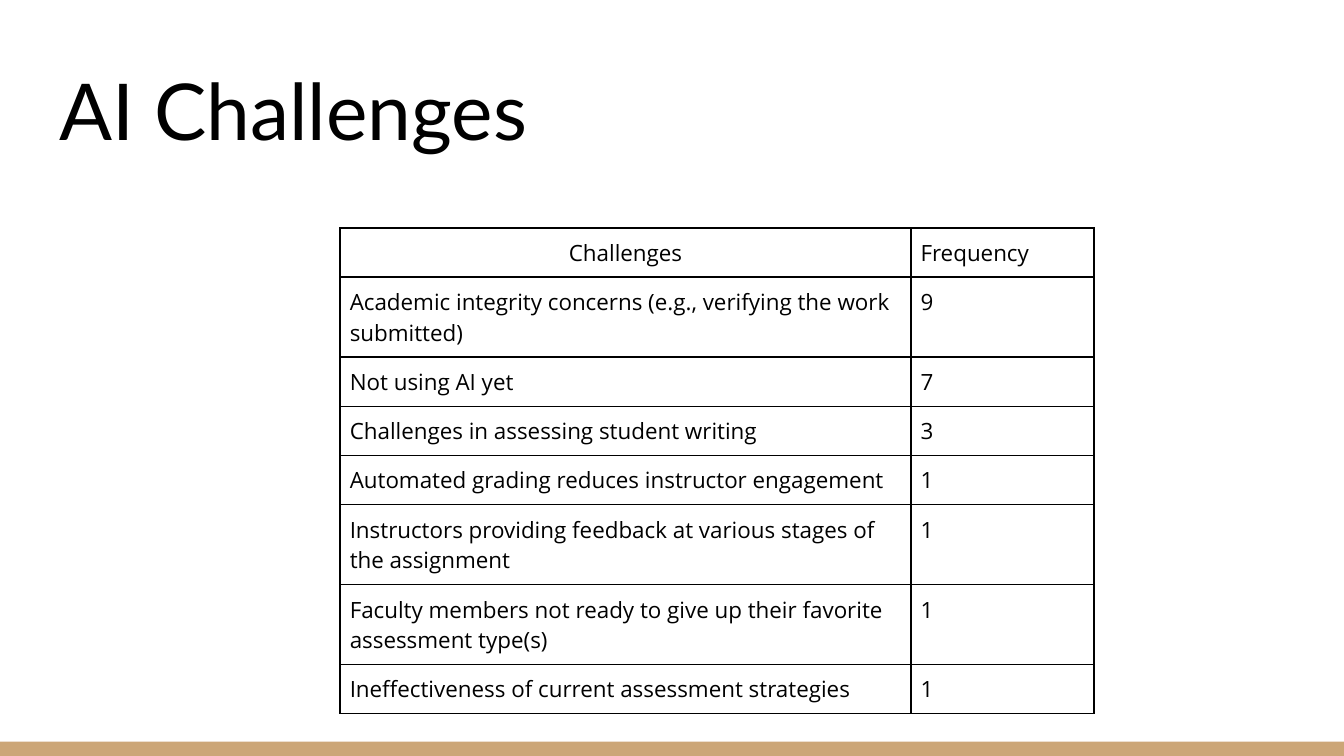
from pptx import Presentation
from pptx.dml.color import RGBColor
from pptx.enum import shapes, text
from pptx.oxml import parse_xml
from pptx.oxml.ns import nsdecls
from pptx.util import Cm, Pt

BLACK = RGBColor(0x00, 0x00, 0x00)
TAN = RGBColor(0xCC, 0xA6, 0x77)

HEADINGS = ("Challenges", "Frequency")
CHALLENGES = [
    ("Academic integrity concerns (e.g., verifying the work submitted)", 9),
    ("Not using AI yet", 7),
    ("Challenges in assessing student writing", 3),
    ("Automated grading reduces instructor engagement", 1),
    ("Instructors providing feedback at various stages of the assignment", 1),
    ("Faculty members not ready to give up their favorite assessment type(s)", 1),
    ("Ineffectiveness of current assessment strategies", 1),
]
FREQUENCY_SHARE = 0.243  # part of the table width
ONE_LINE, TWO_LINES = Cm(0.93), Cm(1.51)
LINE_CHARS = 50  # longer entries wrap onto a second line


def style_text(paragraph, font_name, size):
    for run in paragraph.runs:
        run.font.name = font_name
        run.font.size = Pt(size)
        run.font.color.rgb = BLACK


def add_footer_band(slide, left, top, width, height):
    band = slide.shapes.add_shape(
        shapes.MSO_SHAPE.RECTANGLE, left, top, width, height)
    band.shadow.inherit = False
    band.fill.solid()
    band.fill.fore_color.rgb = TAN
    band.line.fill.background()


def add_title(slide, left, top, width, height):
    frame = slide.shapes.add_textbox(left, top, width, height).text_frame
    frame.word_wrap = True
    frame.vertical_anchor = text.MSO_ANCHOR.BOTTOM
    frame.margin_left = frame.margin_right = Cm(0.25)
    frame.margin_top = frame.margin_bottom = Cm(0.25)
    frame.text = "AI Challenges"
    style_text(frame.paragraphs[0], "Lato", 42)


def add_borders(cell):
    properties = cell._tc.get_or_add_tcPr()
    for position, side in enumerate(("lnL", "lnR", "lnT", "lnB")):
        # Borders must come before the fill
        properties.insert(position, parse_xml(
            f'<a:{side} {nsdecls("a")} w="{Pt(1)}"><a:solidFill>'
            f'<a:srgbClr val="{BLACK}"/></a:solidFill></a:{side}>'))


def fill_cell(cell, wording):
    cell.text = str(wording)
    cell.fill.background()
    cell.margin_left = cell.margin_right = Cm(0.18)
    cell.margin_top = cell.margin_bottom = Cm(0.18)
    style_text(cell.text_frame.paragraphs[0], "Open Sans", 12)
    add_borders(cell)


def add_challenge_table(slide, left, top, width, height):
    entries = [HEADINGS, *CHALLENGES]
    table = slide.shapes.add_table(
        len(entries), len(HEADINGS), left, top, width, height).table
    table.first_row = table.horz_banding = False
    frequency_width = int(width * FREQUENCY_SHARE)
    table.columns[0].width = width - frequency_width
    table.columns[1].width = frequency_width
    for row, entry in zip(table.rows, entries):
        row.height = TWO_LINES if len(entry[0]) > LINE_CHARS else ONE_LINE
        for cell, wording in zip(row.cells, entry):
            fill_cell(cell, wording)
    heading = table.cell(0, 0).text_frame.paragraphs[0]
    heading.alignment = text.PP_ALIGN.CENTER


def main():
    deck = Presentation()
    deck.slide_width, deck.slide_height = Cm(25.4), Cm(14.29)
    slide = deck.slides.add_slide(deck.slide_layouts[6])

    # Band along the bottom edge
    add_footer_band(slide, Cm(0), Cm(14.02), deck.slide_width, Cm(0.27))
    # Heading
    add_title(slide, Cm(0.87), Cm(0.89), Cm(23.67), Cm(2.31))
    # Challenges and how often each was named
    add_challenge_table(slide, Cm(6.43), Cm(4.31), Cm(14.25), Cm(9.18))

    deck.save("out.pptx")


if __name__ == "__main__":
    main()
